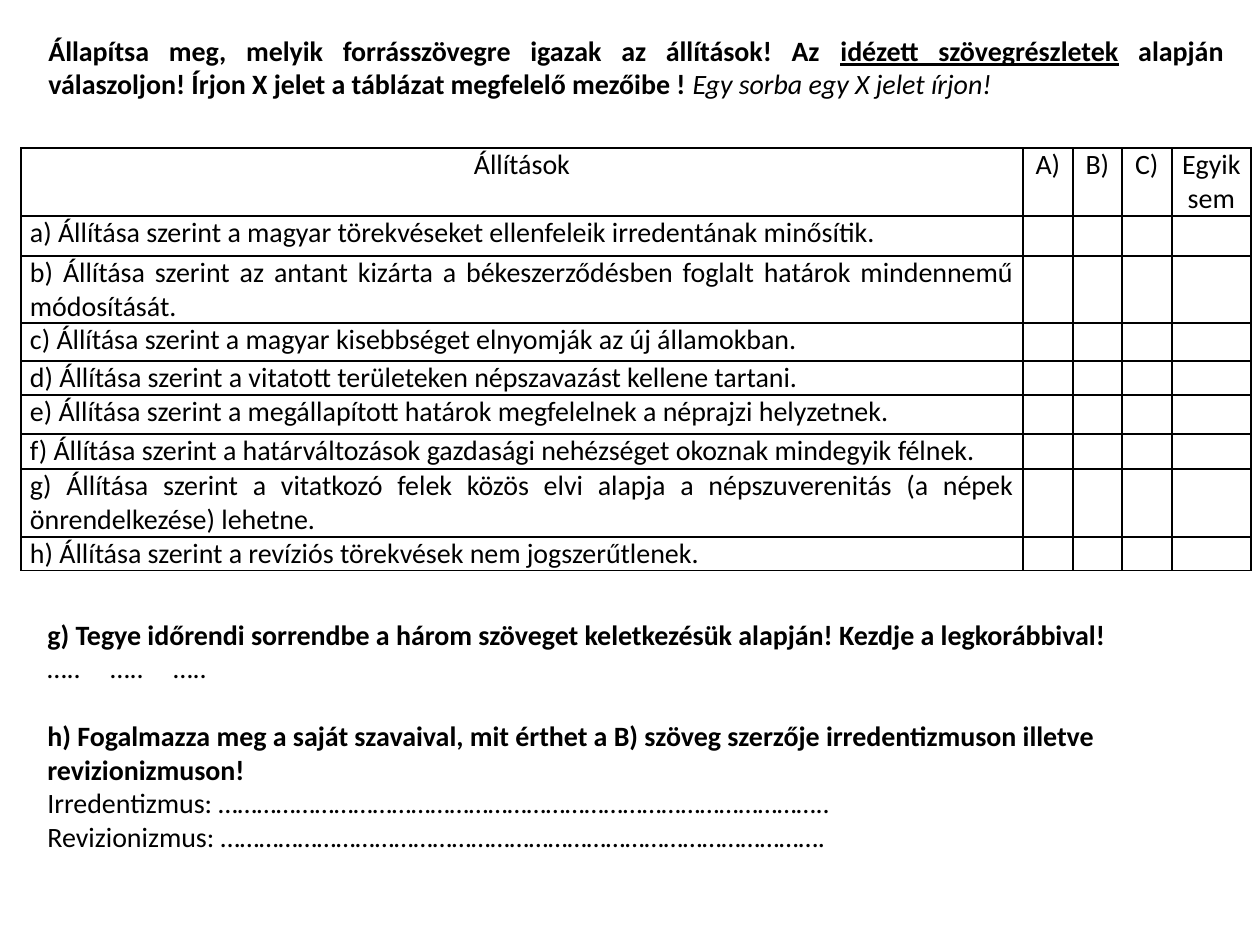
import dataclasses
import typing

import lxml.etree
import pptx
import pptx.dml.color
import pptx.enum.text
import pptx.oxml.ns
import pptx.util

EMU_PER_PX = 914400 // 126
ALIGN = pptx.enum.text.PP_ALIGN


@dataclasses.dataclass(frozen=True)
class Theme:
    font: str = "Calibri"
    size: int = 16
    ink: str = "000000"
    paper: str = "FFFFFF"
    border: float = 1
    line_gap: float = 19.5


class Span(typing.NamedTuple):
    text: str
    bold: bool = False
    italic: bool = False
    underline: bool = False


class Para(typing.NamedTuple):
    spans: list[Span]
    align: ALIGN = ALIGN.LEFT
    before: float = 0


THEME = Theme()

# Wording
INTRO = [Para([
    Span("Állapítsa meg, melyik forrásszövegre igazak az állítások! Az ", bold=True),
    Span("idézett szövegrészletek", bold=True, underline=True),
    Span(" alapján válaszoljon! Írjon X jelet a táblázat megfelelő mezőibe ! ", bold=True),
    Span("Egy sorba egy X jelet írjon!", italic=True),
], ALIGN.JUSTIFY)]

HEADERS = ["Állítások", "A)", "B)", "C)", "Egyik sem"]
STATEMENTS = [
    "a) Állítása szerint a magyar törekvéseket ellenfeleik irredentának minősítik.",
    "b) Állítása szerint az antant kizárta a békeszerződésben foglalt határok mindennemű módosítását.",
    "c) Állítása szerint a magyar kisebbséget elnyomják az új államokban.",
    "d) Állítása szerint a vitatott területeken népszavazást kellene tartani.",
    "e) Állítása szerint a megállapított határok megfelelnek a néprajzi helyzetnek.",
    "f) Állítása szerint a határváltozások gazdasági nehézséget okoznak mindegyik félnek.",
    "g) Állítása szerint a vitatkozó felek közös elvi alapja a népszuverenitás (a népek önrendelkezése) lehetne.",
    "h) Állítása szerint a revíziós törekvések nem jogszerűtlenek.",
]
COL_WIDTHS = [1002, 50, 49, 50, 79]
ROW_HEIGHTS = [68, 40, 67, 38, 34, 39, 35, 68, 33]

TASKS = [
    Para([Span("g) Tegye időrendi sorrendbe a három szöveget keletkezésük alapján! "
               "Kezdje a legkorábbival!", bold=True)]),
    Para([Span("…..\t…..\t…..")]),
    Para([Span("h) Fogalmazza meg a saját szavaival, mit érthet a B) szöveg szerzője "
               "irredentizmuson illetve revizionizmuson!", bold=True)], before=THEME.line_gap),
    Para([Span("Irredentizmus: …………………………………………………………………………………..")]),
    Para([Span("Revizionizmus: ………………………………………………………………………………….")]),
]


def px(n: int) -> pptx.util.Emu:
    return pptx.util.Emu(n * EMU_PER_PX)


def rgb(value: str) -> pptx.dml.color.RGBColor:
    return pptx.dml.color.RGBColor.from_string(value)


def add_run(p, text: str, *, bold: bool = False, italic: bool = False,
            underline: bool = False) -> None:
    r = p.add_run()
    r.text = text
    f = r.font
    f.name, f.size = THEME.font, pptx.util.Pt(THEME.size)
    f.bold, f.italic, f.underline = bold, italic, underline
    f.color.rgb = rgb(THEME.ink)


def write(tf, paras: list[Para]) -> None:
    for i, para in enumerate(paras):
        p = tf.paragraphs[0] if i == 0 else tf.add_paragraph()
        p.alignment = para.align
        p.space_before = pptx.util.Pt(para.before)
        for span in para.spans:
            add_run(p, **span._asdict())


def add_text(s, x: int, y: int, w: int, h: int, paras: list[Para]) -> None:
    tf = s.shapes.add_textbox(px(x), px(y), px(w), px(h)).text_frame
    tf.word_wrap = True
    write(tf, paras)


def set_borders(cell) -> None:
    tc_pr = cell._tc.get_or_add_tcPr()
    qn = pptx.oxml.ns.qn
    for i, side in enumerate(("lnL", "lnR", "lnT", "lnB")):
        ln = lxml.etree.Element(qn(f"a:{side}"), w=str(pptx.util.Pt(THEME.border)))
        fill = lxml.etree.SubElement(ln, qn("a:solidFill"))
        lxml.etree.SubElement(fill, qn("a:srgbClr"), val=THEME.ink)
        tc_pr.insert(i, ln)


def fill_cell(cell, text: str, align: ALIGN) -> None:
    cell.margin_left = cell.margin_right = px(9)
    cell.margin_top = cell.margin_bottom = 0
    cell.fill.solid()
    cell.fill.fore_color.rgb = rgb(THEME.paper)
    set_borders(cell)
    if text:
        write(cell.text_frame, [Para([Span(text)], align)])
    else:
        # An empty cell needs its own type size, or it stretches the row
        p = cell.text_frame.paragraphs[0]
        lxml.etree.SubElement(p._p, pptx.oxml.ns.qn("a:endParaRPr"), sz=str(THEME.size * 100))


def add_answer_table(s, x: int, y: int) -> None:
    rows = [HEADERS] + [[text] + [""] * (len(HEADERS) - 1) for text in STATEMENTS]
    table = s.shapes.add_table(len(rows), len(HEADERS), px(x), px(y),
                               px(sum(COL_WIDTHS)), px(sum(ROW_HEIGHTS))).table
    table.first_row = table.horz_banding = False
    for col, width in zip(table.columns, COL_WIDTHS):
        col.width = px(width)
    for i, (row, height, texts) in enumerate(zip(table.rows, ROW_HEIGHTS, rows)):
        row.height = px(height)
        for cell, text in zip(row.cells, texts):
            fill_cell(cell, text, ALIGN.JUSTIFY if i else ALIGN.CENTER)


def main() -> None:
    prs = pptx.Presentation()
    prs.slide_width, prs.slide_height = px(1260), px(945)
    s = prs.slides.add_slide(prs.slide_layouts[6])
    s.background.fill.solid()
    s.background.fill.fore_color.rgb = rgb(THEME.paper)

    # Tasks below, table in the middle, instruction on top
    add_text(s, 35, 611, 1202, 251, TASKS)
    add_answer_table(s, 21, 148)
    add_text(s, 36, 27, 1200, 118, INTRO)

    prs.save("out.pptx")


if __name__ == "__main__":
    main()
